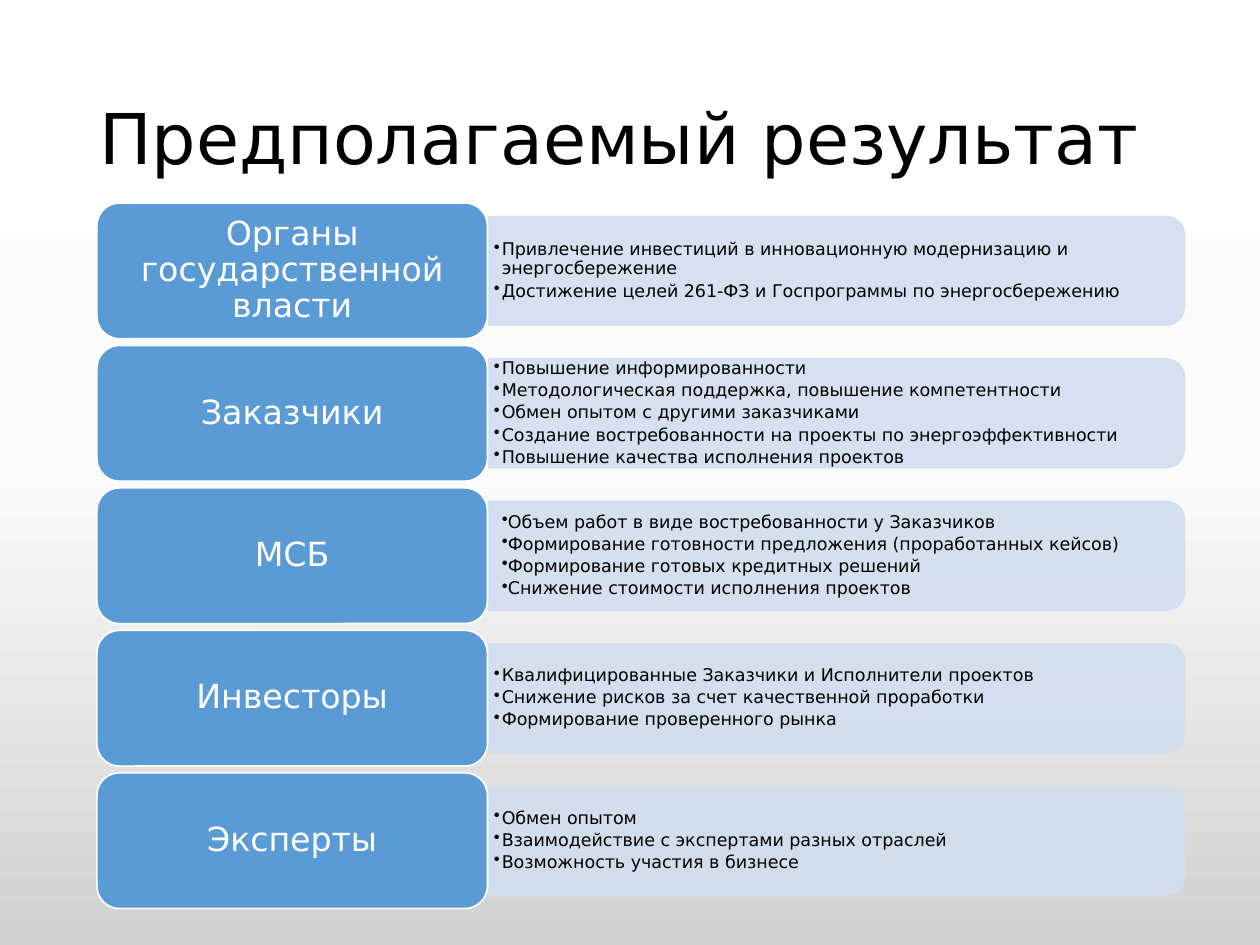
"""Build the slide listing the expected result for each group of participants."""
from copy import deepcopy
from dataclasses import dataclass

from lxml import etree
from pptx import Presentation
from pptx import util as u
from pptx.dml.color import RGBColor
from pptx.enum import shapes, text
from pptx.oxml import ns


@dataclass(frozen=True)
class Theme:
    font: str = "DejaVu Sans"
    ink: str = "000000"
    white: str = "FFFFFF"
    card: str = "5B9BD5"
    panel: str = "D2DEEF"
    panel_alpha: int = 90
    backdrop: tuple = ((0, "FFFFFF"), (0.5, "FBFBFB"), (1, "D1D1D1"))
    title_size: float = 40
    group_size: float = 19
    benefit_size: float = 10


@dataclass(frozen=True)
class Box:
    left: float
    top: float
    width: float
    height: float

    def lengths(self) -> list:
        return [u.Pt(v) for v in (self.left, self.top, self.width, self.height)]


@dataclass(frozen=True)
class Group:
    name: str
    benefits: tuple
    hanging: float = -4.5


THEME = Theme()
FIRST_TOP, PITCH = 116, 81.4
CARD_LEFT, CARD_WIDTH, CARD_HEIGHT = 55.4, 223.2, 77.6
PANEL_LEFT, PANEL_WIDTH, PANEL_HEIGHT = 279.2, 397.6, 62
LIST_WIDTH, LIST_HEIGHT = 394.6, 56

GROUPS = (
    Group("Органы государственной власти", (
        "Привлечение инвестиций в инновационную модернизацию и энергосбережение",
        "Достижение целей 261-ФЗ и Госпрограммы по энергосбережению")),
    Group("Заказчики", (
        "Повышение информированности",
        "Методологическая поддержка, повышение компетентности",
        "Обмен опытом с другими заказчиками",
        "Создание востребованности на проекты по энергоэффективности",
        "Повышение качества исполнения проектов")),
    Group("МСБ", (
        "Объем работ в виде востребованности у Заказчиков",
        "Формирование готовности предложения (проработанных кейсов)",
        "Формирование готовых кредитных решений",
        "Снижение стоимости исполнения проектов"), hanging=0),
    Group("Инвесторы", (
        "Квалифицированные Заказчики и Исполнители проектов",
        "Снижение рисков за счет качественной проработки",
        "Формирование проверенного рынка")),
    Group("Эксперты", (
        "Обмен опытом",
        "Взаимодействие с экспертами разных отраслей",
        "Возможность участия в бизнесе")),
)


def write(frame, lines: tuple, *, size: float, color: str = THEME.ink,
          align=text.PP_ALIGN.LEFT, inset: tuple = (7.2, 3.6),
          after: float = 0, hanging: float | None = None) -> None:
    frame.word_wrap = True
    frame.auto_size = text.MSO_AUTO_SIZE.NONE
    frame.vertical_anchor = text.MSO_ANCHOR.MIDDLE
    frame.margin_left = frame.margin_right = u.Pt(inset[0])
    frame.margin_top = frame.margin_bottom = u.Pt(inset[1])
    for index, line in enumerate(lines):
        paragraph = frame.add_paragraph() if index else frame.paragraphs[0]
        paragraph.alignment = align
        paragraph.line_spacing = 0.9
        paragraph.space_before = u.Pt(0)
        paragraph.space_after = u.Pt(after)
        run = paragraph.add_run()
        run.text = line
        run.font.name = THEME.font
        run.font.size = u.Pt(size)
        run.font.color.rgb = RGBColor.from_string(color)
        if hanging is not None:
            properties = paragraph._p.get_or_add_pPr()
            properties.set("marL", str(u.Pt(4.5)))
            properties.set("indent", str(u.Pt(hanging)))
            etree.SubElement(properties, ns.qn("a:buChar"), char="•")


def draw_shape(slide, preset, box: Box, *, fill: str, line: str,
               rotation: float = 0, alpha: int = 100):
    shape = slide.shapes.add_shape(preset, *box.lengths())
    shape.rotation = rotation
    shape.shadow.inherit = False
    shape.fill.solid()
    shape.fill.fore_color.rgb = RGBColor.from_string(fill)
    shape.line.color.rgb = RGBColor.from_string(line)
    shape.line.width = u.Pt(1)
    if alpha < 100:
        for color in shape._element.spPr.iter(ns.qn("a:srgbClr")):
            etree.SubElement(color, ns.qn("a:alpha"), val=str(alpha * 1000))
    return shape


def draw_group(slide, group: Group, top: float) -> None:
    middle = top + CARD_HEIGHT / 2
    center = PANEL_LEFT + PANEL_WIDTH / 2
    upright = Box(center - PANEL_HEIGHT / 2, middle - PANEL_WIDTH / 2,
                  PANEL_HEIGHT, PANEL_WIDTH)
    draw_shape(slide, shapes.MSO_SHAPE.ROUND_2_SAME_RECTANGLE, upright,
               fill=THEME.panel, line=THEME.panel, rotation=90,
               alpha=THEME.panel_alpha)
    area = Box(PANEL_LEFT, middle - LIST_HEIGHT / 2, LIST_WIDTH, LIST_HEIGHT)
    benefits = slide.shapes.add_textbox(*area.lengths())
    write(benefits.text_frame, group.benefits, size=THEME.benefit_size,
          inset=(3, 1.5), after=1.8, hanging=group.hanging)
    card = draw_shape(slide, shapes.MSO_SHAPE.ROUNDED_RECTANGLE,
                      Box(CARD_LEFT, top, CARD_WIDTH, CARD_HEIGHT),
                      fill=THEME.card, line=THEME.white)
    write(card.text_frame, (group.name,), size=THEME.group_size,
          color=THEME.white, align=text.PP_ALIGN.CENTER, inset=(5.7, 2.9))


def paint_backdrop(slide) -> None:
    fill = slide.background.fill
    fill.gradient()
    fill.gradient_angle = 270
    stops = next(slide.element.iter(ns.qn("a:gsLst")))
    stops.insert(1, deepcopy(stops[0]))
    for stop, (position, color) in zip(fill.gradient_stops, THEME.backdrop):
        stop.position = position
        stop.color.rgb = RGBColor.from_string(color)


def main() -> None:
    deck = Presentation()
    deck.slide_width, deck.slide_height = u.Pt(720), u.Pt(540)
    slide = deck.slides.add_slide(deck.slide_layouts[5])
    paint_backdrop(slide)
    title = slide.shapes.title
    title.left, title.top, title.width, title.height = Box(
        49.5, 28.75, 621, 104.4).lengths()
    write(title.text_frame, ("Предполагаемый результат",),
          size=THEME.title_size)
    for row, group in enumerate(GROUPS):
        draw_group(slide, group, FIRST_TOP + row * PITCH)
    deck.save("out.pptx")


if __name__ == "__main__":
    main()
